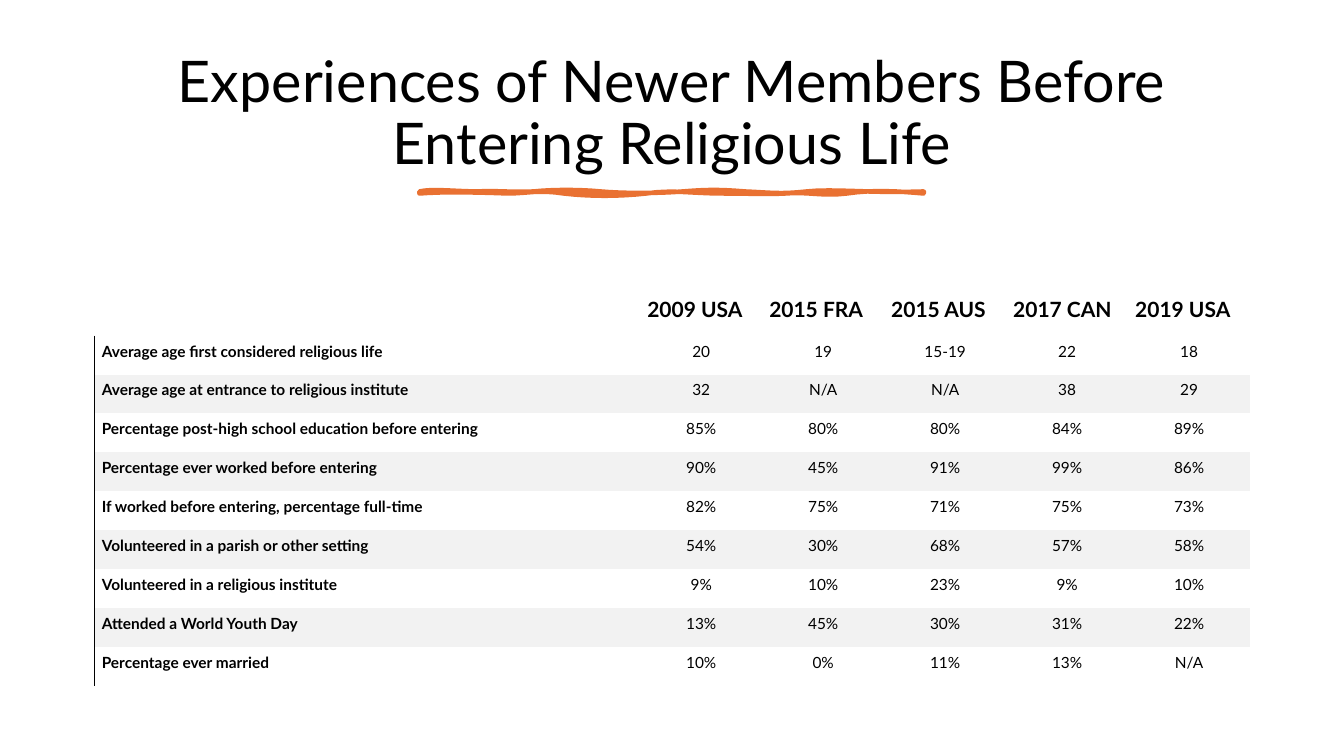
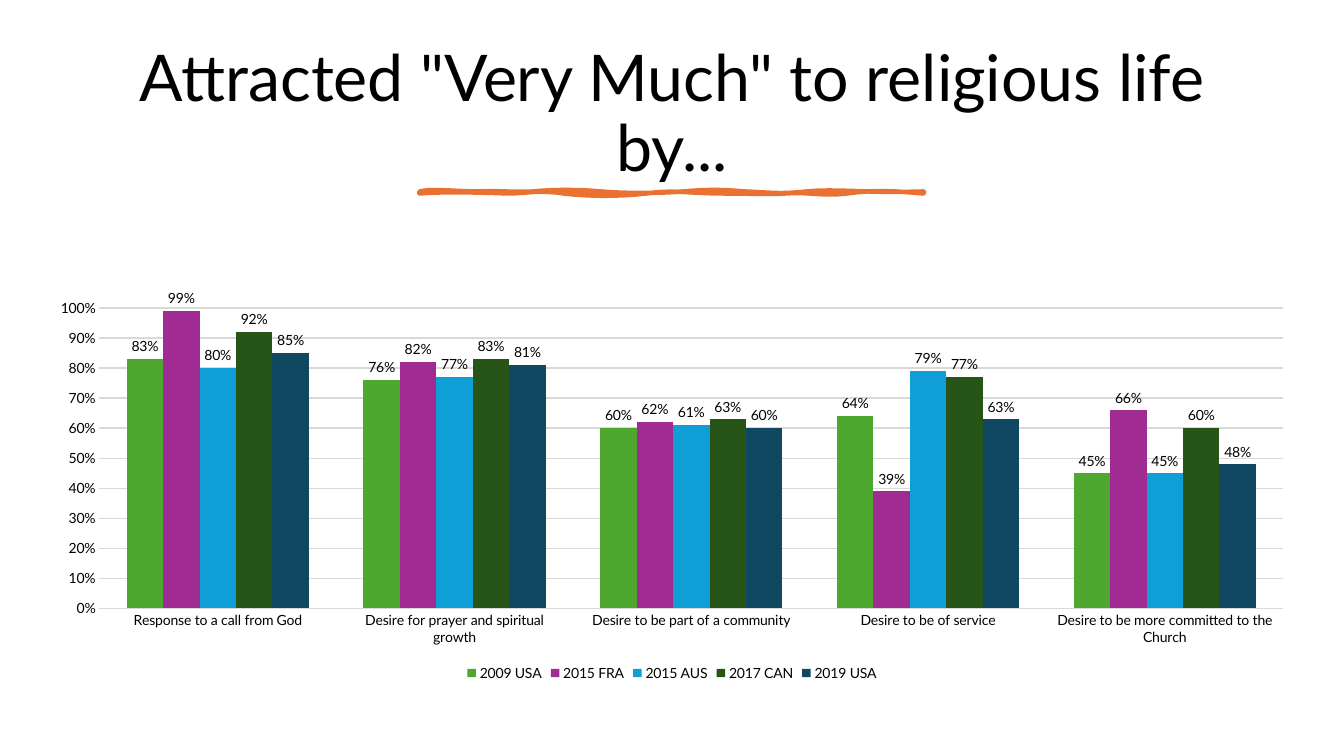
from lxml import etree
from pptx import Presentation
from pptx.chart.data import CategoryChartData
from pptx.dml.color import RGBColor
from pptx.enum.chart import (XL_CHART_TYPE, XL_LABEL_POSITION as LABEL_POS,
                             XL_LEGEND_POSITION as LEGEND_POS, XL_TICK_MARK as TICK)
from pptx.enum.text import MSO_ANCHOR as ANCHOR, MSO_AUTO_SIZE as AUTO_SIZE, PP_ALIGN as ALIGN
from pptx.oxml import parse_xml
from pptx.oxml.ns import nsdecls, qn
from pptx.util import Emu, Pt

# Shared look: 100 px to the inch
PX = 9144
FONT = "Lato"
BLACK, BAND, GRID, ORANGE = "000000", "F2F2F2", "D9D9D9", "E97132"
TITLE_BOX = (70, 46, 1193, 137)
NO_STYLE = "{2D5ABB26-0587-4C30-8999-92F81FD0307C}"

# Content
SURVEYS = [("2009 USA", "4EA72E"), ("2015 FRA", "A02B93"), ("2015 AUS", "0F9ED5"),
           ("2017 CAN", "275417"), ("2019 USA", "104862")]

TABLE_TITLE = "Experiences of Newer Members Before Entering Religious Life"
TABLE_ROWS = [
    ("Average age first considered religious life", "20", "19", "15-19", "22", "18"),
    ("Average age at entrance to religious institute", "32", "N/A", "N/A", "38", "29"),
    ("Percentage post-high school education before entering", "85%", "80%", "80%", "84%", "89%"),
    ("Percentage ever worked before entering", "90%", "45%", "91%", "99%", "86%"),
    ("If worked before entering, percentage full-time", "82%", "75%", "71%", "75%", "73%"),
    ("Volunteered in a parish or other setting", "54%", "30%", "68%", "57%", "58%"),
    ("Volunteered in a religious institute", "9%", "10%", "23%", "9%", "10%"),
    ("Attended a World Youth Day", "13%", "45%", "30%", "31%", "22%"),
    ("Percentage ever married", "10%", "0%", "11%", "13%", "N/A"),
]

CHART_TITLE = 'Attracted "Very Much" to religious life by...'
ATTRACTIONS = [
    ("Response to a call from God", (0.83, 0.99, 0.80, 0.92, 0.85)),
    ("Desire for prayer and spiritual growth", (0.76, 0.82, 0.77, 0.83, 0.81)),
    ("Desire to be part of a community", (0.60, 0.62, 0.61, 0.63, 0.60)),
    ("Desire to be of service", (0.64, 0.39, 0.79, 0.77, 0.63)),
    ("Desire to be more committed to the Church", (0.45, 0.66, 0.45, 0.60, 0.48)),
]

# Brush stroke under the title: start, then cubic curves (two controls, end)
STROKE_START = (416, 190)
STROKE_CURVES = [
    (428, 187, 454, 190, 473, 190), (492, 189, 509, 191, 529, 190),
    (549, 188, 574, 188, 596, 190), (617, 192, 653, 192, 677, 190),
    (702, 188, 714, 188, 739, 190), (763, 191, 774, 193, 800, 190),
    (826, 187, 867, 192, 916, 190), (917, 191, 916, 191, 916, 192),
    (895, 190, 865, 188, 840, 192), (815, 195, 801, 190, 779, 192),
    (756, 193, 747, 192, 717, 192), (687, 192, 667, 188, 641, 192),
    (614, 195, 585, 195, 559, 192), (534, 188, 523, 192, 503, 192),
    (483, 191, 438, 190, 416, 192), (416, 191, 416, 190, 416, 190),
]
CURVE_STEPS = 8


def px(n):
    return Emu(round(n * PX))


def box(*lengths):
    return [px(n) for n in lengths]


def color(value):
    return RGBColor.from_string(value)


def set_font(font, size, bold=False):
    font.name, font.size, font.bold = FONT, Pt(size), bold
    font.color.rgb = color(BLACK)


def set_line(line, value, width):
    line.color.rgb = color(value)
    line.width = Pt(width)


def stroke_points():
    """Points along the curves, in EMU."""
    points, (x0, y0) = [], STROKE_START
    for x1, y1, x2, y2, x3, y3 in STROKE_CURVES:
        for step in range(1, CURVE_STEPS + 1):
            t = step / CURVE_STEPS
            u = 1 - t
            a, b, c, d = u ** 3, 3 * u * u * t, 3 * u * t * t, t ** 3
            points.append((px(a * x0 + b * x1 + c * x2 + d * x3),
                           px(a * y0 + b * y1 + c * y2 + d * y3)))
        x0, y0 = x3, y3
    return points


def add_titled_slide(prs, title, size):
    s = prs.slides.add_slide(prs.slide_layouts[5])
    # Title
    sp = s.shapes.title
    sp.left, sp.top, sp.width, sp.height = box(*TITLE_BOX)
    tf = sp.text_frame
    tf.text = title
    tf.word_wrap = True
    tf.auto_size = AUTO_SIZE.NONE
    tf.vertical_anchor = ANCHOR.MIDDLE
    p = tf.paragraphs[0]
    p.alignment, p.line_spacing = ALIGN.CENTER, 0.9
    set_font(p.runs[0].font, size)
    # Brush stroke
    builder = s.shapes.build_freeform(*box(*STROKE_START))
    builder.add_line_segments(stroke_points(), close=True)
    stroke = builder.convert_to_shape()
    stroke.shadow.inherit = False
    stroke.fill.solid()
    stroke.fill.fore_color.rgb = color(ORANGE)
    set_line(stroke.line, ORANGE, 3.25)
    etree.SubElement(stroke.line._get_or_add_ln(), qn("a:round"))
    return s


def fill_cell(cell, text, size, bold, align, fill):
    if fill:
        cell.fill.solid()
        cell.fill.fore_color.rgb = color(fill)
    else:
        cell.fill.background()
    if not text:
        return
    cell.text = text
    cell.vertical_anchor = ANCHOR.BOTTOM
    cell.margin_left, cell.margin_top, cell.margin_right, cell.margin_bottom = box(7, 2, 7, 14)
    p = cell.text_frame.paragraphs[0]
    p.alignment, p.line_spacing = align, 1.07
    set_font(p.runs[0].font, size, bold)


def add_left_border(cell):
    cell._tc.get_or_add_tcPr().insert(0, parse_xml(
        f'<a:lnL {nsdecls("a")} w="{Pt(0.75)}"><a:solidFill>'
        f'<a:srgbClr val="{BLACK}"/></a:solidFill></a:lnL>'))


def add_survey_table(s):
    rows = [("", *(name for name, _ in SURVEYS)), *TABLE_ROWS]
    table = s.shapes.add_table(len(rows), len(rows[0]), *box(94, 288, 1144, 392)).table
    table.first_row = table.horz_banding = False
    table._tbl.tblPr.find(qn("a:tableStyleId")).text = NO_STYLE
    for c, column in enumerate(table.columns):
        column.width = px(121 if c else 541)
    for r, values in enumerate(rows):
        table.rows[r].height = px(38.6 if r else 45)
        fill = BAND if r and r % 2 == 0 else None
        for c, text in enumerate(values):
            cell = table.cell(r, c)
            align = ALIGN.CENTER if r and c else ALIGN.LEFT
            fill_cell(cell, text, 11 if r else 15, not (r and c), align, fill)
            if r and not c:
                add_left_border(cell)


def add_attraction_chart(s):
    data = CategoryChartData(number_format="0%")
    data.categories = [name for name, _ in ATTRACTIONS]
    for i, (name, _) in enumerate(SURVEYS):
        data.add_series(name, [values[i] for _, values in ATTRACTIONS])
    chart = s.shapes.add_chart(XL_CHART_TYPE.COLUMN_CLUSTERED,
                               *box(35, 288, 1263, 392), data).chart
    set_font(chart.font, 10)
    chart.has_title = False
    chart.has_legend = True
    chart.legend.position = LEGEND_POS.BOTTOM
    chart.legend.include_in_layout = False
    set_font(chart.legend.font, 10)
    # Axes
    cats, vals = chart.category_axis, chart.value_axis
    for axis in (cats, vals):
        axis.major_tick_mark = axis.minor_tick_mark = TICK.NONE
        set_font(axis.tick_labels.font, 10)
    set_line(cats.format.line, GRID, 0.75)
    vals.format.line.fill.background()
    vals.minimum_scale, vals.maximum_scale, vals.major_unit = 0, 1, 0.1
    vals.tick_labels.number_format = "0%"
    vals.tick_labels.number_format_is_linked = False
    set_line(vals.major_gridlines.format.line, GRID, 0.75)
    # Columns and their labels
    plot = chart.plots[0]
    plot.gap_width, plot.vary_by_categories = 150, False
    for series, (_, fill) in zip(plot.series, SURVEYS):
        series.format.fill.solid()
        series.format.fill.fore_color.rgb = color(fill)
        labels = series.data_labels
        labels.show_value = True
        labels.position = LABEL_POS.OUTSIDE_END
        labels.number_format, labels.number_format_is_linked = "0%", False
        set_font(labels.font, 10)


def main():
    prs = Presentation()
    prs.slide_width, prs.slide_height = box(1333, 750)
    add_survey_table(add_titled_slide(prs, TABLE_TITLE, 41))
    add_attraction_chart(add_titled_slide(prs, CHART_TITLE, 46))
    prs.save("out.pptx")


if __name__ == "__main__":
    main()
